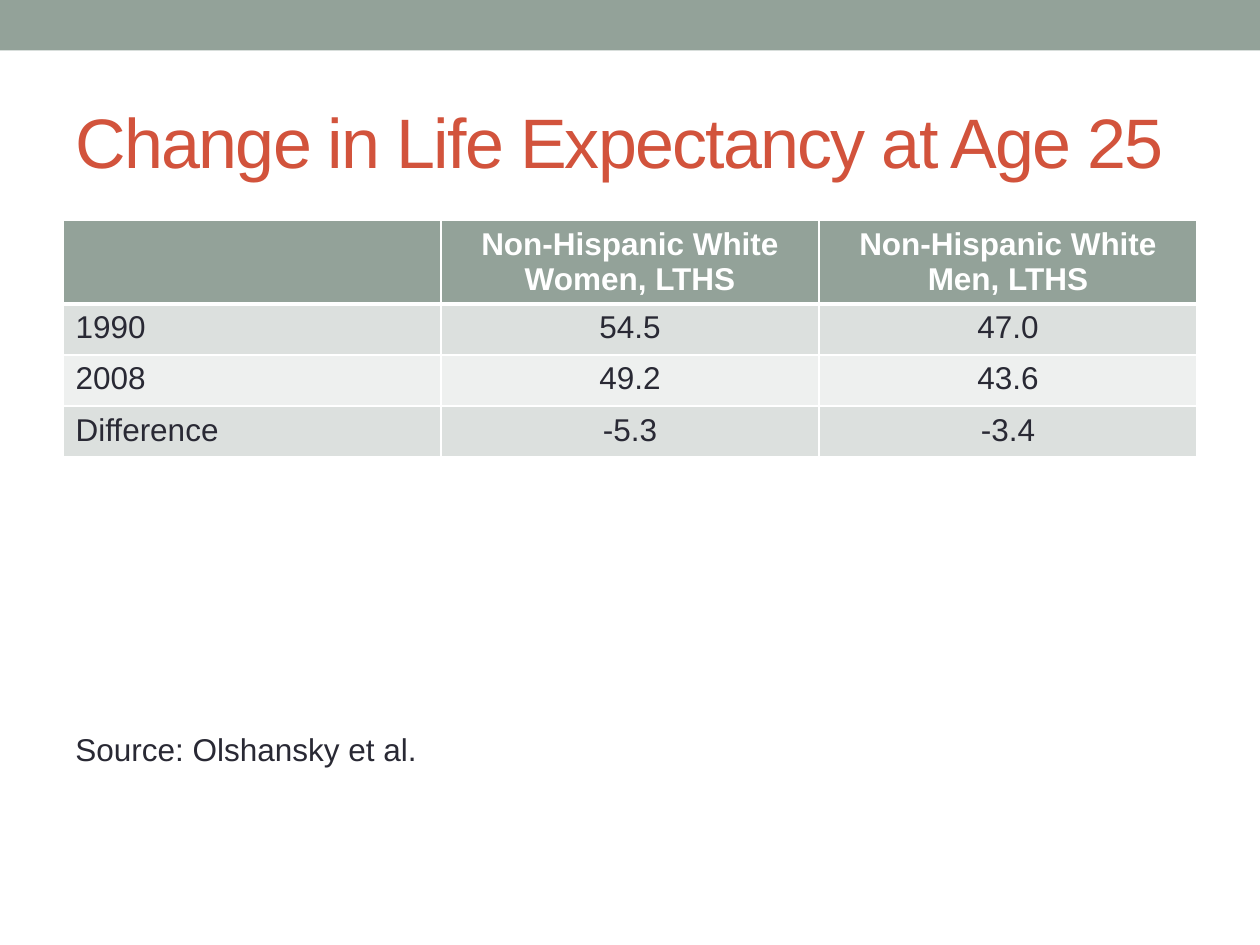
from lxml import etree
from pptx import Presentation
from pptx.dml.color import RGBColor
from pptx.enum.shapes import MSO_SHAPE
from pptx.enum.text import MSO_ANCHOR, MSO_AUTO_SIZE, PP_ALIGN
from pptx.oxml.ns import qn
from pptx.util import Cm, Pt

RECTANGLE = MSO_SHAPE.RECTANGLE
MIDDLE = MSO_ANCHOR.MIDDLE
NO_AUTOFIT, GROW = MSO_AUTO_SIZE.NONE, MSO_AUTO_SIZE.SHAPE_TO_FIT_TEXT
LEFT, CENTER = PP_ALIGN.LEFT, PP_ALIGN.CENTER

TITLE_ONLY = 5
SAGE, RUST, INK, WHITE = "93A299", "D2533C", "292934", "FFFFFF"
BANDS = ("DCE0DE", "EEF0EF")

EXPECTANCY = [
    ("", "Non-Hispanic White Women, LTHS", "Non-Hispanic White Men, LTHS"),
    ("1990", "54.5", "47.0"),
    ("2008", "49.2", "43.6"),
    ("Difference", "-5.3", "-3.4"),
]


def color(hex_value):
    return RGBColor.from_string(hex_value)


def write(frame, text, size, hex_value, bold=False, align=LEFT):
    frame.text = text
    paragraph = frame.paragraphs[0]
    paragraph.alignment = align
    for run in paragraph.runs:
        run.font.name = "Arial"
        run.font.size = Pt(size)
        run.font.bold = bold
        run.font.color.rgb = color(hex_value)


def set_borders(cell, bottom_width):
    properties = cell._tc.get_or_add_tcPr()
    widths = {"a:lnL": 1, "a:lnR": 1, "a:lnT": 1, "a:lnB": bottom_width}
    for position, (tag, width) in enumerate(widths.items()):
        line = etree.Element(qn(tag), w=str(Pt(width)))
        fill = etree.SubElement(line, qn("a:solidFill"))
        etree.SubElement(fill, qn("a:srgbClr"), val=WHITE)
        properties.insert(position, line)


def add_top_band(slide, left, top, width, height):
    band = slide.shapes.add_shape(RECTANGLE, left, top, width, height)
    band.shadow.inherit = False
    band.fill.solid()
    band.fill.fore_color.rgb = color(SAGE)
    band.line.fill.background()


def add_heading(slide, left, top, width, height):
    title = slide.shapes.title
    title.left, title.top, title.width, title.height = left, top, width, height
    frame = title.text_frame
    frame.auto_size = NO_AUTOFIT
    frame.vertical_anchor = MIDDLE
    write(frame, "Change in Life Expectancy at Age 25", 40, RUST)
    # Tighten the letter spacing by one point
    frame.paragraphs[0].runs[0].font._element.set("spc", "-100")


def add_expectancy_table(slide, left, top, width, header_height, row_height):
    row_count, column_count = len(EXPECTANCY), len(EXPECTANCY[0])
    height = header_height + row_height * (row_count - 1)
    table = slide.shapes.add_table(
        row_count, column_count, left, top, width, height).table
    for r, values in enumerate(EXPECTANCY):
        header = r == 0
        table.rows[r].height = header_height if header else row_height
        for c, value in enumerate(values):
            cell = table.cell(r, c)
            cell.fill.solid()
            cell.fill.fore_color.rgb = color(SAGE if header else BANDS[(r - 1) % 2])
            write(cell.text_frame, value, 18, WHITE if header else INK,
                  bold=header, align=CENTER if c else LEFT)
            set_borders(cell, 3 if header else 1)


def add_source_note(slide, left, top, width, height):
    frame = slide.shapes.add_textbox(left, top, width, height).text_frame
    frame.word_wrap = False
    frame.auto_size = GROW
    write(frame, "Source: Olshansky et al.", 18, INK)


def main():
    presentation = Presentation()
    presentation.slide_width, presentation.slide_height = Cm(25.4), Cm(19.05)
    slide = presentation.slides.add_slide(presentation.slide_layouts[TITLE_ONLY])
    margin = Cm(1.27)
    content_width = presentation.slide_width - 2 * margin

    add_top_band(slide, 0, 0, presentation.slide_width, Cm(1.02))
    add_heading(slide, margin, Cm(1.47), content_width, Cm(2.74))
    add_expectancy_table(slide, margin, Cm(4.45), content_width, Cm(1.65), Cm(1.03))
    add_source_note(slide, margin, Cm(14.6), Cm(7.47), Cm(1.02))
    presentation.save("out.pptx")


if __name__ == "__main__":
    main()
